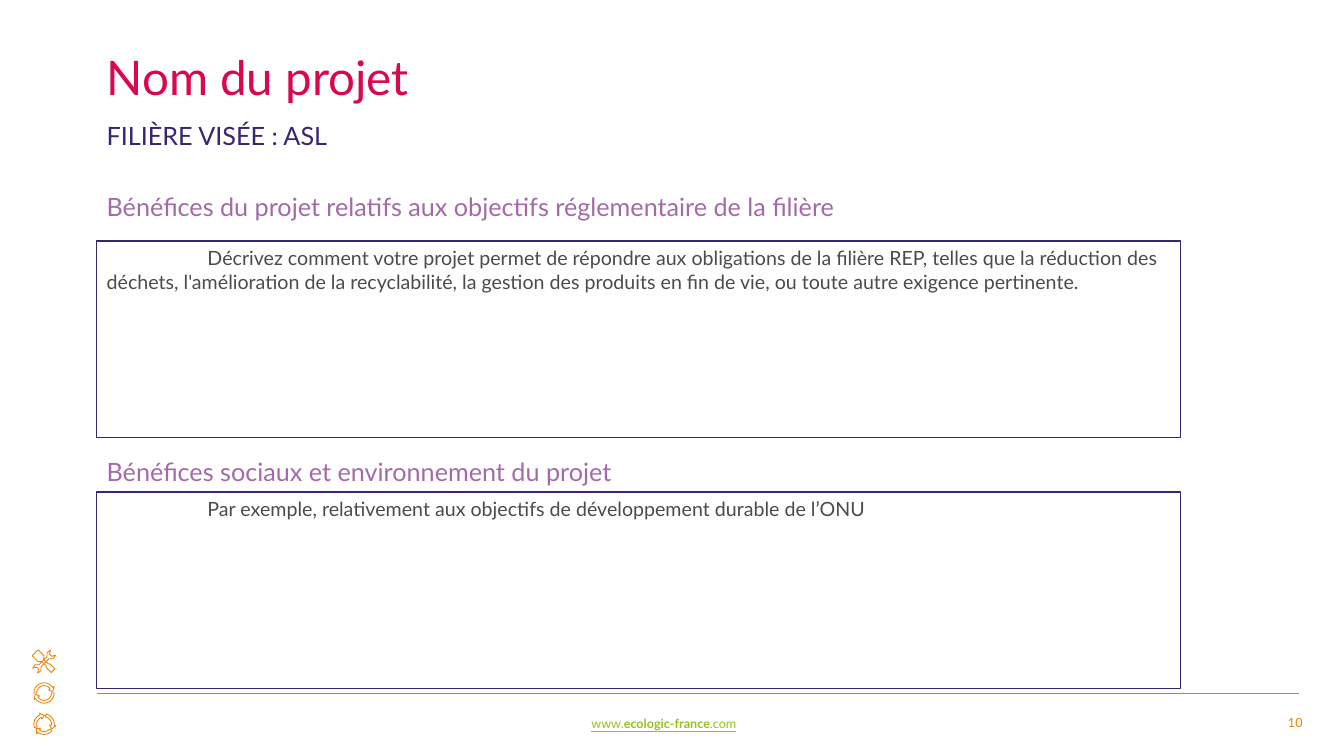
from math import cos, radians, sin

from lxml.etree import SubElement
from pptx import Presentation
from pptx.dml.color import RGBColor
from pptx.enum.shapes import MSO_CONNECTOR, MSO_SHAPE
from pptx.enum.text import MSO_ANCHOR, PP_ALIGN
from pptx.oxml.ns import qn
from pptx.util import Pt

FONT = "Lato"
PINK, NAVY, MAUVE, TEXT = "D9084D", "362671", "A46AA7", "4B4B4B"
ORANGE, GREEN, GREY, WHITE = "EE7F00", "95C11F", "8C8C8C", "FFFFFF"
LEFT, WIDTH = 69.1, 822.2
BRUSH = [(-9, -3), (-3, -3), (-1.5, -1), (3, -1), (4, -1.8), (9, -1.8),
         (9, 1.8), (4, 1.8), (3, 1), (-1.5, 1), (-3, 3), (-9, 3)]
WRENCH = [(-9, -2.5), (-6, -3), (-4, -1), (4, -1), (6, -3), (9, -2.5), (6.5, -1),
          (6.5, 1), (9, 2.5), (6, 3), (4, 1), (-4, 1), (-6, 3), (-9, 2.5),
          (-6.5, 1), (-6.5, -1)]


def color(value):
    return RGBColor.from_string(value)


def add_span(para, text, size, shade, bold=False, underline=False):
    span = para.add_run()
    span.text = text
    span.font.name = FONT
    span.font.size = Pt(size)
    span.font.color.rgb = color(shade)
    span.font.bold = bold
    span.font.underline = underline


def add_text(page, left, top, width, height):
    box = page.shapes.add_textbox(Pt(left), Pt(top), Pt(width), Pt(height))
    box.text_frame.word_wrap = True
    return box.text_frame.paragraphs[0]


def add_outline(page, points):
    corners = [(Pt(x), Pt(y)) for x, y in points]
    builder = page.shapes.build_freeform(*corners[0], scale=1.0)
    builder.add_line_segments(corners[1:], close=True)
    shape = builder.convert_to_shape()
    shape.shadow.inherit = False
    shape.fill.background()
    shape.line.color.rgb = color(ORANGE)
    shape.line.width = Pt(0.6)


def add_tool(page, center_x, center_y, profile, angle):
    turn_x, turn_y = cos(radians(angle)), sin(radians(angle))
    add_outline(page, [(center_x + x * turn_x - y * turn_y,
                        center_y + x * turn_y + y * turn_x) for x, y in profile])


def add_cycle(page, center_x, center_y, count, first_angle):
    inner, outer, head = 5.3, 7.3, 25
    sweep = 360 / count - 8
    for index in range(count):
        start = first_angle + index * 360 / count
        steps = [start + (sweep - head) * step / 8 for step in range(9)]
        polar = [(outer, angle) for angle in steps]
        polar += [(outer + 1.3, steps[-1]), ((inner + outer) / 2, start + sweep),
                  (inner - 1.3, steps[-1])]
        polar += [(inner, angle) for angle in reversed(steps)]
        add_outline(page, [(center_x + radius * cos(radians(angle)),
                            center_y + radius * sin(radians(angle)))
                           for radius, angle in polar])


def add_icons(page, center_x, top, gap):
    add_tool(page, center_x, top, BRUSH, 45)
    add_tool(page, center_x, top, WRENCH, -45)
    add_cycle(page, center_x, top + gap, 2, 0)
    add_cycle(page, center_x, top + 2 * gap, 3, -80)


def add_footer(page, left, top, right):
    rule = page.shapes.add_connector(MSO_CONNECTOR.STRAIGHT, Pt(left), Pt(top),
                                     Pt(right), Pt(top))
    rule.line.color.rgb = color(GREY)
    rule.line.width = Pt(0.75)
    SubElement(rule._element.spPr, qn("a:effectLst"))
    address = add_text(page, left + 346.3, top + 12.2, 377.3, 18)
    for text, bold in [("www.", False), ("ecologic-france", True), (".com", False)]:
        add_span(address, text, 9, GREEN, bold, underline=True)
    number = add_text(page, right - 36.7, top + 11.5, 46.1, 18.5)
    number.alignment = PP_ALIGN.RIGHT
    add_span(number, "10", 9, ORANGE)


def add_header(page, left, top, width):
    title = add_text(page, left, top, width, 44.6)
    title.line_spacing = 0.9
    add_span(title, "Nom du projet", 34, PINK)
    sector = add_text(page, left, top + 46.8, width, 28.8)
    add_span(sector, "FILIÈRE VISÉE : ASL", 18, NAVY)


def add_section(page, left, top, frame_top, heading, body):
    add_span(add_text(page, left, top, WIDTH, 28.8), heading, 18, MAUVE)
    frame = page.shapes.add_shape(MSO_SHAPE.RECTANGLE, Pt(left), Pt(frame_top),
                                  Pt(774), Pt(140.4))
    frame.shadow.inherit = False
    frame.fill.solid()
    frame.fill.fore_color.rgb = color(WHITE)
    frame.line.color.rgb = color(NAVY)
    frame.line.width = Pt(1)
    frame.text_frame.word_wrap = True
    frame.text_frame.vertical_anchor = MSO_ANCHOR.TOP
    para = frame.text_frame.paragraphs[0]
    para.alignment = PP_ALIGN.LEFT
    para._p.get_or_add_pPr().set("indent", str(Pt(72)))
    add_span(para, body, 14, TEXT)


def main():
    deck = Presentation()
    deck.slide_width, deck.slide_height = Pt(960), Pt(540)
    page = deck.slides.add_slide(deck.slide_layouts[6])
    add_footer(page, LEFT, 495.4, 928.1)
    add_icons(page, 31.5, 472.7, 22.3)
    add_header(page, LEFT, 35.3, WIDTH)
    add_section(page, LEFT, 133.2, 172.1,
                "Bénéfices du projet relatifs aux objectifs réglementaire de la filière",
                "Décrivez comment votre projet permet de répondre aux obligations de la "
                "filière REP, telles que la réduction des déchets, l'amélioration de la "
                "recyclabilité, la gestion des produits en fin de vie, ou toute autre "
                "exigence pertinente.")
    add_section(page, LEFT, 322.6, 351.4,
                "Bénéfices sociaux et environnement du projet",
                "Par exemple, relativement aux objectifs de développement durable de l’ONU")
    deck.save("out.pptx")


if __name__ == "__main__":
    main()
